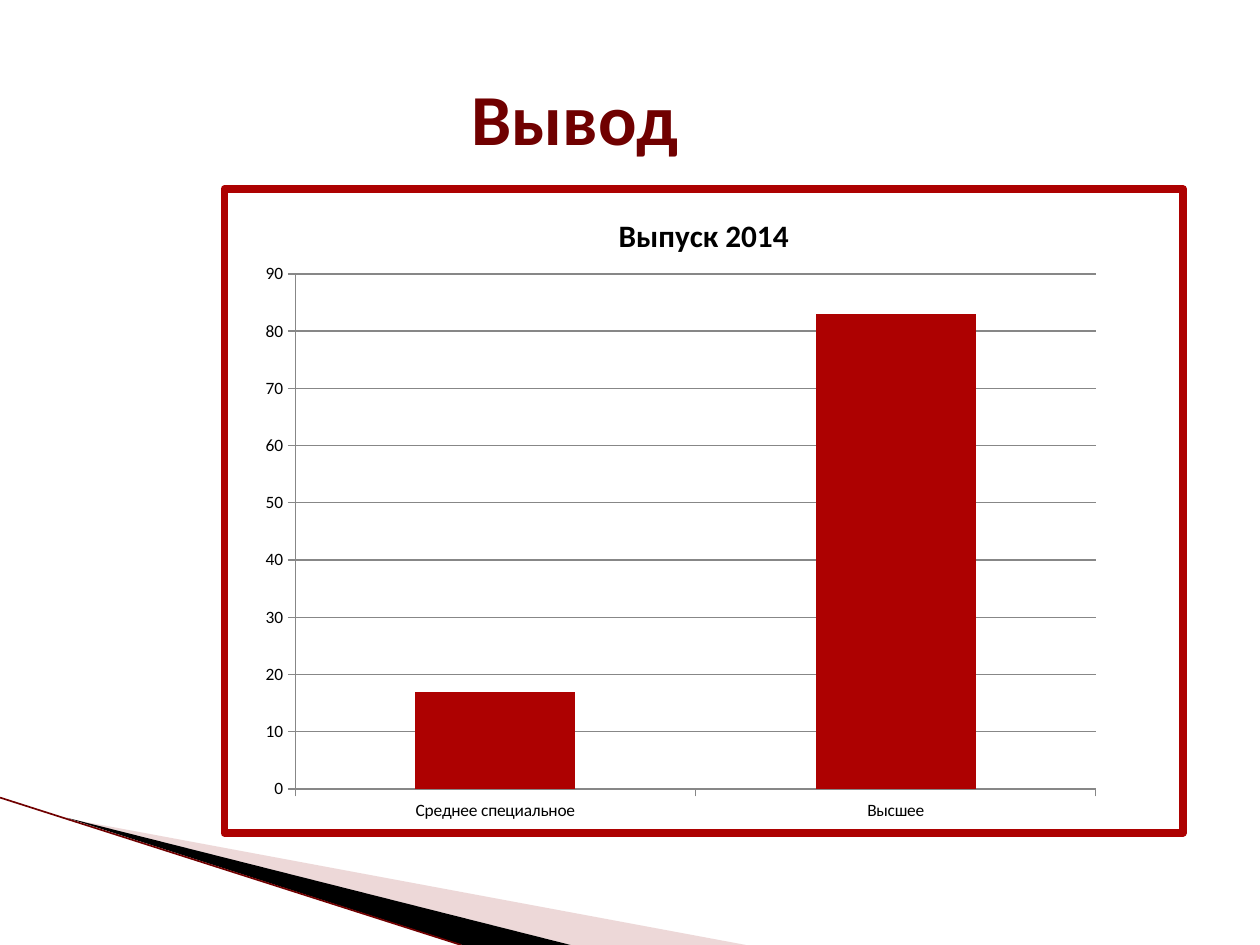
from lxml import etree
from pptx import Presentation
from pptx.chart.data import CategoryChartData
from pptx.dml.color import RGBColor
from pptx.enum.chart import XL_CHART_TYPE, XL_TICK_MARK
from pptx.enum.shapes import MSO_CONNECTOR
from pptx.enum.text import MSO_ANCHOR, PP_ALIGN
from pptx.oxml import parse_xml
from pptx.oxml.ns import nsdecls, qn
from pptx.util import Inches, Pt

FONT = "Calibri"
BLACK, WHITE = "000000", "FFFFFF"
RED, DARK_RED, PINK, GRID_GRAY = "AD0101", "700000", "D29E9E", "878787"


def color(hex_text):
    return RGBColor.from_string(hex_text)


def format_font(font, size, hex_text, bold=False):
    font.name = FONT
    font.size = Pt(size)
    font.bold = bold
    font.color.rgb = color(hex_text)


def write_text(text_frame, text, size=18, hex_text=BLACK, bold=False,
               align=PP_ALIGN.CENTER):
    paragraph = text_frame.paragraphs[0]
    paragraph.alignment = align
    run = paragraph.add_run()
    run.text = text
    format_font(run.font, size, hex_text, bold)


def add_title(slide, text):
    title = slide.shapes.title
    title.left, title.top = Inches(0), Inches(0.3)
    title.width, title.height = Inches(9), Inches(1.25)
    title.text_frame.vertical_anchor = MSO_ANCHOR.MIDDLE
    write_text(title.text_frame, text, size=41, hex_text=DARK_RED, bold=True)


def add_wedge(slide, points, hex_text, opacity=100):
    start, *others = [(Inches(x), Inches(y)) for x, y in points]
    builder = slide.shapes.build_freeform(*start)
    builder.add_line_segments(others, close=True)
    shape = builder.convert_to_shape()
    shape.shadow.inherit = False
    shape.line.fill.background()
    shape.fill.solid()
    shape.fill.fore_color.rgb = color(hex_text)
    if opacity < 100:
        fill = shape._element.spPr.find(qn("a:solidFill"))
        etree.SubElement(fill[0], qn("a:alpha"), val=str(opacity * 1000))


def add_line(slide, start, end, hex_text, width):
    ends = [Inches(value) for value in (*start, *end)]
    line = slide.shapes.add_connector(MSO_CONNECTOR.STRAIGHT, *ends)
    line.line.color.rgb = color(hex_text)
    line.line.width = Pt(width)
    etree.SubElement(line._element.spPr, qn("a:effectLst"))


def frame_chart(chart, fill, border, width):
    """Give the whole chart area a fill and a border with round corners."""
    chart._chartSpace.find(qn("c:chart")).addnext(parse_xml(
        f'<c:spPr {nsdecls("c", "a")}>'
        f'<a:solidFill><a:srgbClr val="{fill}"/></a:solidFill>'
        f'<a:ln w="{Pt(width)}"><a:solidFill><a:srgbClr val="{border}"/>'
        '</a:solidFill><a:round/></a:ln></c:spPr>'))


def place_plot(chart, x, y, w, h):
    """Fix the inner plot area, in percent of the chart."""
    plot_area = chart._chartSpace.chart.plotArea
    for layout in plot_area.findall(qn("c:layout")):
        plot_area.remove(layout)
    sizes = "".join(f'<c:{name} val="{value / 100}"/>'
                    for name, value in zip("xywh", (x, y, w, h)))
    plot_area.insert(0, parse_xml(
        f'<c:layout {nsdecls("c")}><c:manualLayout>'
        '<c:layoutTarget val="inner"/><c:xMode val="edge"/>'
        f'<c:yMode val="edge"/>{sizes}</c:manualLayout></c:layout>'))


def add_column_chart(slide, title, categories, values):
    data = CategoryChartData()
    data.categories = categories
    data.add_series("Series 1", values)
    chart = slide.shapes.add_chart(
        XL_CHART_TYPE.COLUMN_STACKED, Inches(1.75), Inches(1.47),
        Inches(7.67), Inches(5.17), data).chart
    format_font(chart.font, 10, BLACK)
    chart.has_legend = False
    chart.has_title = True
    write_text(chart.chart_title.text_frame, title, bold=True)
    chart.chart_title.include_in_layout = False

    plot = chart.plots[0]
    plot.vary_by_categories = False
    plot.gap_width, plot.overlap = 150, 100
    bars = plot.series[0].format.fill
    bars.solid()
    bars.fore_color.rgb = color(RED)

    value_axis = chart.value_axis
    value_axis.minimum_scale, value_axis.maximum_scale = 0, 90
    value_axis.major_unit = 10
    value_axis.has_major_gridlines = True
    for axis in (chart.category_axis, value_axis):
        axis.major_tick_mark = XL_TICK_MARK.OUTSIDE
        axis.minor_tick_mark = XL_TICK_MARK.NONE
    for part in (chart.category_axis, value_axis, value_axis.major_gridlines):
        part.format.line.color.rgb = color(GRID_GRAY)
        part.format.line.width = Pt(0.75)

    frame_chart(chart, WHITE, RED, 4.33)
    place_plot(chart, 7.4, 13.2, 83.5, 80)


def main():
    presentation = Presentation()
    presentation.slide_width, presentation.slide_height = Inches(10), Inches(7.5)
    slide = presentation.slides.add_slide(presentation.slide_layouts[5])
    add_wedge(slide, [(0.55, 6.5), (5.92, 7.5), (4.53, 7.5)], PINK, opacity=40)
    add_wedge(slide, [(0.53, 6.49), (4.53, 7.5), (3.67, 7.5)], BLACK)
    add_line(slide, (0, 6.33), (3.66, 7.5), DARK_RED, 0.95)
    add_title(slide, " Вывод")
    add_column_chart(slide, "Выпуск 2014",
                     ["Среднее специальное", "Высшее"], [17, 83])
    presentation.save("out.pptx")


if __name__ == "__main__":
    main()
